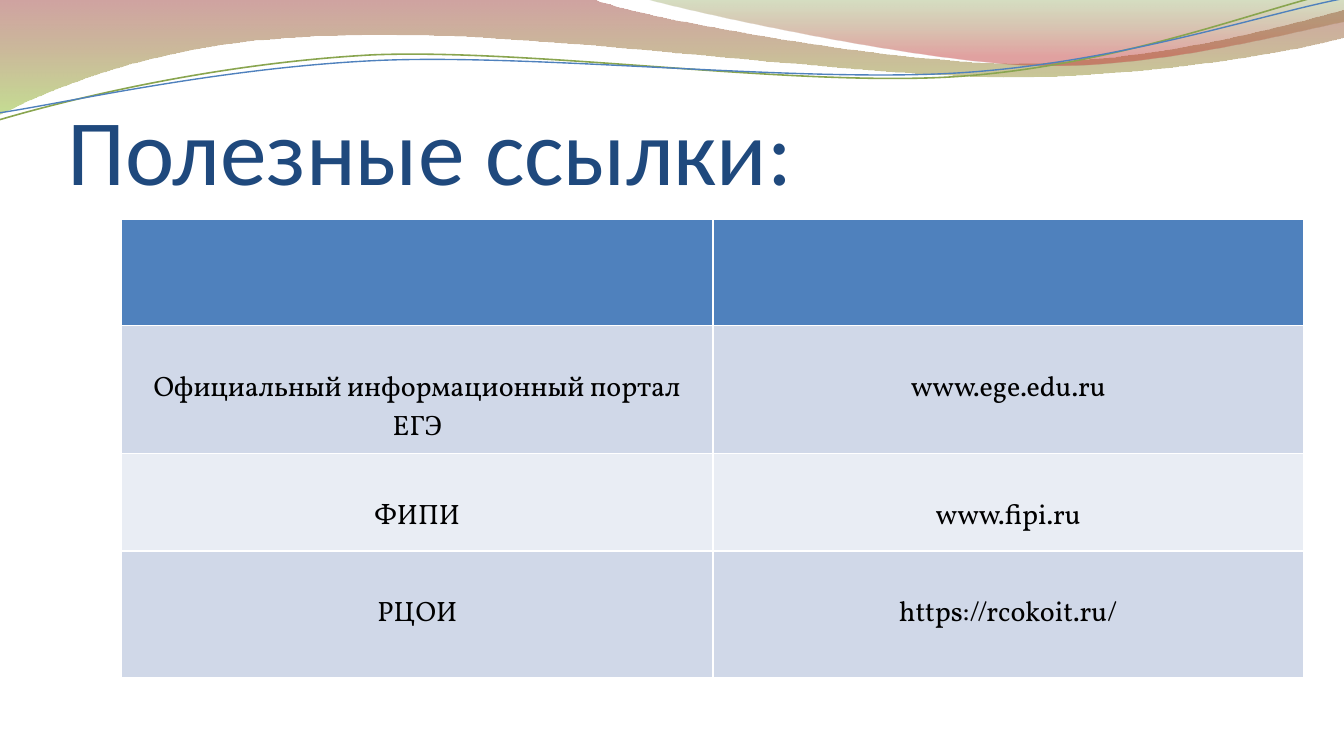
from lxml import etree
from pptx import Presentation
from pptx.dml.color import RGBColor
from pptx.enum.text import MSO_ANCHOR, PP_ALIGN
from pptx.oxml.ns import qn
from pptx.util import Cm, Pt

LEFT, CENTER = PP_ALIGN.LEFT, PP_ALIGN.CENTER
TOP, BOTTOM = MSO_ANCHOR.TOP, MSO_ANCHOR.BOTTOM

COLORS = {
    "title": "1F497D", "text": "000000", "border": "FFFFFF",
    "header": "4F81BD", "odd": "D0D8E8", "even": "E9EDF4",
    "dark_red": "973330", "lime": "95C238", "olive": "769537",
    "red": "BE3330", "green": "89A54F", "blue": "4F81BD",
}

TITLE = "Полезные ссылки:"
ROWS = [
    ("", ""),
    ("Официальный информационный портал ЕГЭ", "www.ege.edu.ru"),
    ("ФИПИ", "www.fipi.ru"),
    ("РЦОИ", "https://rcokoit.ru/"),
]
ROW_HEIGHTS = [2.01, 2.4, 1.84, 2.4]
COL_WIDTH = 11.17

# Outlines in cm: a start point, then segments of one point (line)
# or three points (Bezier curve).
# Gradient stops: position, colour, opacity in percent.
BANDS = [
    {"start": (0, 0),
     "segments": [
         [(11.18, -0.03)],
         [(12.09, 0.33), (16.87, 1.19), (19.25, 1.19)],
         [(21.67, 1.19), (24.33, 0.48), (25.4, 0.18)],
         [(25.43, 0.69)],
         [(24.97, 0.84), (22.1, 1.45), (18.95, 1.45)],
         [(15.8, 1.42), (9.7, 0.53), (6.53, 0.66)],
         [(3.28, 0.69), (1.17, 1.57), (-0.03, 2.16)]],
     "stops": [(0, "dark_red", 45), (100, "lime", 55)]},
    {"start": (12.17, -0.03),
     "segments": [
         [(12.93, 0.2), (17.32, 1.17), (19.53, 1.24)],
         [(21.74, 1.32), (24.41, 0.61), (25.4, 0.41)],
         [(25.4, 0)]],
     "stops": [(0, "olive", 30), (80, "red", 45)]},
]
WAVES = [
    {"start": (-0.04, 1.66),
     "segments": [
         [(1.19, 1.36), (4.02, 0.79), (7.05, 0.77)],
         [(10.07, 0.79), (15.01, 1.76), (18.06, 1.7)],
         [(21.14, 1.64), (23.88, 0.68), (25.4, 0.42)]],
     "color": "green", "width": 0.85},
    {"start": (-0.03, 1.53),
     "segments": [
         [(1.17, 1.41), (4.17, 0.87), (7.19, 0.88)],
         [(10.24, 0.9), (15.14, 1.69), (18.19, 1.63)],
         [(21.22, 1.57), (23.93, 0.78), (25.44, 0.57)]],
     "color": "blue", "width": 0.75},
]
WAVE_ROTATION = -2.7


def rgb(name):
    return RGBColor.from_string(COLORS[name])


def add_outline(s, item, close):
    """Build a freeform through all points, then turn triples into curves."""
    def units(point):
        return tuple(round(v * 100) for v in point)

    builder = s.shapes.build_freeform(*units(item["start"]), scale=Cm(0.01))
    points = [units(p) for seg in item["segments"] for p in seg]
    builder.add_line_segments(points, close=close)
    sp = builder.convert_to_shape()
    sp.shadow.inherit = False
    lines = iter(list(sp._element.iter(qn("a:lnTo"))))
    for seg in item["segments"]:
        group = [next(lines) for _ in seg]
        if len(group) == 3:
            curve = etree.Element(qn("a:cubicBezTo"))
            group[0].addprevious(curve)
            for line in group:
                curve.append(line[0])
                line.getparent().remove(line)
    return sp


def add_band(s, band):
    sp = add_outline(s, band, True)
    sp.line.fill.background()
    sp.fill.gradient()
    sp.fill.gradient_angle = 270
    for stop, (position, color, _) in zip(sp.fill.gradient_stops, band["stops"]):
        stop.position = position / 100
        stop.color.rgb = rgb(color)
    for clr, (_, _, opacity) in zip(sp._element.spPr.iter(qn("a:srgbClr")), band["stops"]):
        etree.SubElement(clr, qn("a:alpha"), val=str(opacity * 1000))


def add_wave(s, wave):
    sp = add_outline(s, wave, False)
    sp.rotation = WAVE_ROTATION
    sp.fill.background()
    sp.line.color.rgb = rgb(wave["color"])
    sp.line.width = Pt(wave["width"])


def write(p, text, font, size, color, align):
    p.alignment = align
    r = p.add_run()
    r.text = text
    r.font.name = font
    r.font.size = Pt(size)
    r.font.color.rgb = rgb(color)


def set_borders(cell):
    tcPr = cell._tc.get_or_add_tcPr()
    for i, side in enumerate(("a:lnL", "a:lnR", "a:lnT", "a:lnB")):
        ln = etree.Element(qn(side), w=str(Pt(1)))
        fill = etree.SubElement(ln, qn("a:solidFill"))
        etree.SubElement(fill, qn("a:srgbClr"), val=COLORS["border"])
        tcPr.insert(i, ln)


def add_links_table(s):
    table = s.shapes.add_table(
        len(ROWS), 2, Cm(2.3), Cm(4.14),
        Cm(2 * COL_WIDTH), Cm(sum(ROW_HEIGHTS))).table
    for col in table.columns:
        col.width = Cm(COL_WIDTH)
    for i, (row, height, texts) in enumerate(zip(table.rows, ROW_HEIGHTS, ROWS)):
        row.height = Cm(height)
        fill = "header" if i == 0 else "odd" if i % 2 else "even"
        for cell, text in zip(row.cells, texts):
            cell.fill.solid()
            cell.fill.fore_color.rgb = rgb(fill)
            set_borders(cell)
            cell.vertical_anchor = TOP
            cell.margin_left = cell.margin_right = Cm(0.25)
            cell.margin_top, cell.margin_bottom = Cm(0.84), Cm(0.1)
            if text:
                write(cell.text_frame.paragraphs[0], text, "Vollkorn", 15, "text", CENTER)


def set_title(s):
    title = s.shapes.title
    title.left, title.top = Cm(1.27), Cm(1.47)
    title.width, title.height = Cm(22.86), Cm(2.39)
    tf = title.text_frame
    tf.word_wrap = True
    tf.vertical_anchor = BOTTOM
    tf.margin_left = tf.margin_right = tf.margin_bottom = 0
    tf.margin_top = Cm(0.13)
    write(tf.paragraphs[0], TITLE, "Calibri", 50, "title", LEFT)
    s.shapes._spTree.append(title._element)  # in front of the waves


def main():
    prs = Presentation()
    prs.slide_width, prs.slide_height = Cm(25.4), Cm(14.28)
    s = prs.slides.add_slide(prs.slide_layouts[5])
    for band in BANDS:
        add_band(s, band)
    for wave in WAVES:
        add_wave(s, wave)
    set_title(s)
    add_links_table(s)
    prs.save("out.pptx")


if __name__ == "__main__":
    main()
